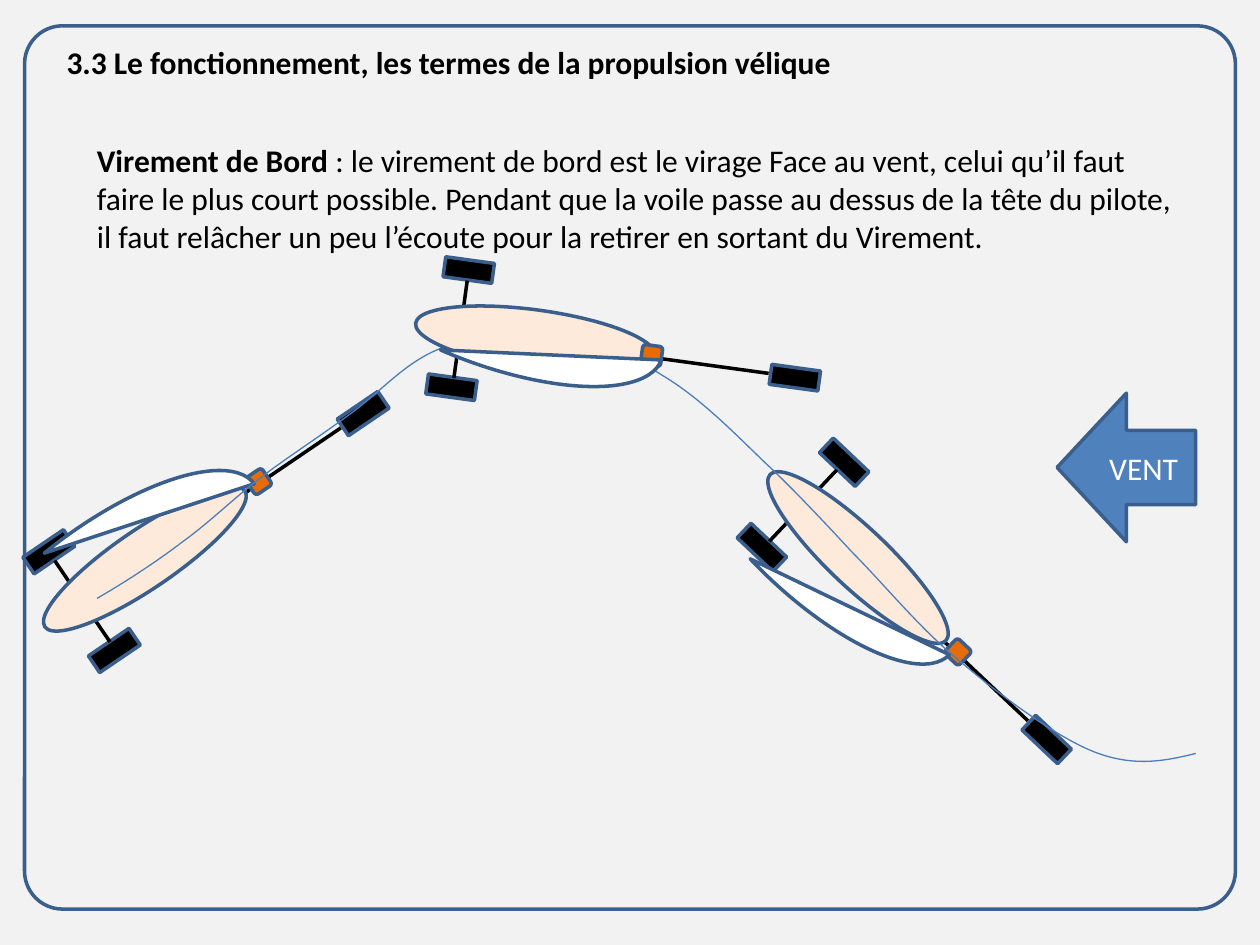
from math import cos, radians, sin
from lxml.etree import SubElement
from pptx import Presentation
from pptx.dml.color import RGBColor
from pptx.enum.shapes import MSO_CONNECTOR, MSO_SHAPE as Shape
from pptx.enum.text import MSO_ANCHOR, MSO_AUTO_SIZE, PP_ALIGN
from pptx.oxml.ns import qn
from pptx.util import Inches, Pt

PAPER = RGBColor(0xF2, 0xF2, 0xF2)
BLACK = RGBColor(0, 0, 0)
WHITE = RGBColor(0xFF, 0xFF, 0xFF)
OUTLINE = RGBColor(0x3A, 0x5F, 0x8C)
WIND = RGBColor(0x4F, 0x81, 0xBD)
TRACK = RGBColor(0x4B, 0x7E, 0xBC)
HULL = RGBColor(0xFD, 0xEA, 0xDA)
MAST = RGBColor(0xE4, 0x6C, 0x0A)

HEADING = [("3.3 Le fonctionnement, les termes de la propulsion vélique", True)]
DEFINITION = [
    ("Virement de Bord ", True),
    (": le virement de bord est le virage Face au vent, celui qu’il faut faire le plus "
     "court possible. Pendant que la voile passe au dessus de la tête du pilote, il faut "
     "relâcher un peu l’écoute pour la retirer en sortant du Virement.", False),
]

WHEELS = [(2.08, 0.02), (-0.61, 0.465), (-0.6, -0.475)]
AXLE = [(-0.6, 0.39), (-0.6, -0.39)]
BEAM = [(1.87, 0.015), (-0.57, 0.015)]
INCOMING = dict(hull=(1.15, 4.435), heading=-34.2, mast=1.09,
                sail=(0.83, 4.715), sail_turn=53.6, flipped=False)
OUTGOING = dict(hull=(6.81, 4.425), heading=43.4, mast=1.09,
                sail=(6.47, 4.175), sail_turn=133.8, flipped=True)
TACKING = dict(hull=(4.25, 2.695), heading=7.8, mast=0.93,
               sail=(3.87, 2.335), sail_turn=110.7, flipped=True)

COURSE_START = (0.77, 4.75)
COURSE = [
    [(1.01, 4.61), (1.24, 4.46), (1.45, 4.3)],
    [(1.67, 4.14), (1.85, 3.96), (2.07, 3.79)],
    [(2.28, 3.63), (2.53, 3.47), (2.76, 3.3)],
    [(2.99, 3.14), (3.18, 2.91), (3.44, 2.79)],
    [(3.71, 2.67), (4.04, 2.55), (4.35, 2.58)],
    [(4.66, 2.62), (5, 2.82), (5.29, 3)],
    [(5.58, 3.18), (5.84, 3.45), (6.08, 3.68)],
    [(6.33, 3.91), (6.76, 4.38), (6.76, 4.38)],
    [(7.02, 4.64), (7.3, 4.99), (7.62, 5.25)],
    [(7.94, 5.52), (8.38, 5.85), (8.69, 5.97)],
    [(9, 6.09), (9.25, 6.04), (9.49, 5.98)],
]

deck = Presentation()
deck.slide_width, deck.slide_height = Inches(10), Inches(7.5)
slide = deck.slides.add_slide(deck.slide_layouts[6])
slide.background.fill.solid()
slide.background.fill.fore_color.rgb = PAPER


def emu(point):
    return tuple(Inches(length) for length in point)


def add_part(kind, center, size, fill=None, turn=0, flipped=False):
    (x, y), (width, height) = center, size
    part = slide.shapes.add_shape(kind, *emu((x - width / 2, y - height / 2, width, height)))
    part.shadow.inherit = False
    part.rotation = turn
    if flipped:
        part._element.spPr.find(qn("a:xfrm")).set("flipH", "1")
    if fill is None:
        part.fill.background()
    else:
        part.fill.solid()
        part.fill.fore_color.rgb = fill
    part.line.color.rgb = OUTLINE
    part.line.width = Pt(2)
    return part


def add_rod(start, end):
    rod = slide.shapes.add_connector(MSO_CONNECTOR.STRAIGHT, *emu(start), *emu(end))
    rod.line.color.rgb = BLACK
    rod.line.width = Pt(2)
    SubElement(rod._element.spPr, qn("a:effectLst"))


def add_text(left, top, width, height, runs):
    frame = slide.shapes.add_textbox(*emu((left, top, width, height))).text_frame
    frame.word_wrap = True
    frame.auto_size = MSO_AUTO_SIZE.SHAPE_TO_FIT_TEXT
    paragraph = frame.paragraphs[0]
    set_font(paragraph.font, BLACK)
    for wording, bold in runs:
        run = paragraph.add_run()
        run.text = wording
        run.font.bold = bold


def set_font(font, color):
    font.name, font.size = "Calibri", Pt(18)
    font.color.rgb = color


def add_boat(hull, heading, mast, sail, sail_turn, flipped):
    c, s = cos(radians(heading)), sin(radians(heading))

    def place(along, across):
        return hull[0] + along * c - across * s, hull[1] + along * s + across * c

    turn = heading + 180
    for wheel in WHEELS:
        add_part(Shape.RECTANGLE, place(*wheel), (0.39, 0.16), BLACK, turn)
    for start, end in (AXLE, BEAM):
        add_rod(place(*start), place(*end))
    add_part(Shape.OVAL, hull, (1.92, 0.47), HULL, turn)
    add_part(Shape.ROUNDED_RECTANGLE, place(mast, 0), (0.16, 0.16), MAST, turn)
    canvas = add_part(Shape.CHORD, sail, (1.1, 2.95), WHITE, sail_turn, flipped)
    canvas.adjustments[0], canvas.adjustments[1] = 96.306, 162


def add_course():
    builder = slide.shapes.build_freeform(*emu(COURSE_START))
    builder.add_line_segments([emu(curve[-1]) for curve in COURSE], close=False)
    course = builder.convert_to_shape()
    course.shadow.inherit = False
    course.fill.background()
    course.line.color.rgb = TRACK
    course.line.width = Pt(0.75)
    segments = list(course._element.iter(qn("a:lnTo")))
    for segment, curve in zip(segments, COURSE):
        bezier = SubElement(segment.getparent(), qn("a:cubicBezTo"))
        for x, y in map(emu, curve):
            SubElement(bezier, qn("a:pt"), x=str(x - course.left), y=str(y - course.top))
        segment.getparent().replace(segment, bezier)


add_text(0.43, 0.29, 8.43, 0.4, HEADING)
border = add_part(Shape.ROUNDED_RECTANGLE, (5, 3.71), (9.61, 7.01))
border.adjustments[0] = 0.043
add_boat(**INCOMING)
add_boat(**OUTGOING)

wind = add_part(Shape.RIGHT_ARROW, (8.94, 3.71), (1.1, 1.18), WIND, flipped=True)
wind.text_frame.vertical_anchor = MSO_ANCHOR.MIDDLE
label = wind.text_frame.paragraphs[0]
label.text = "VENT"
label.alignment = PP_ALIGN.CENTER
set_font(label.font, WHITE)

add_text(0.67, 1.07, 8.79, 1.01, DEFINITION)
add_course()
add_boat(**TACKING)
deck.save("out.pptx")
